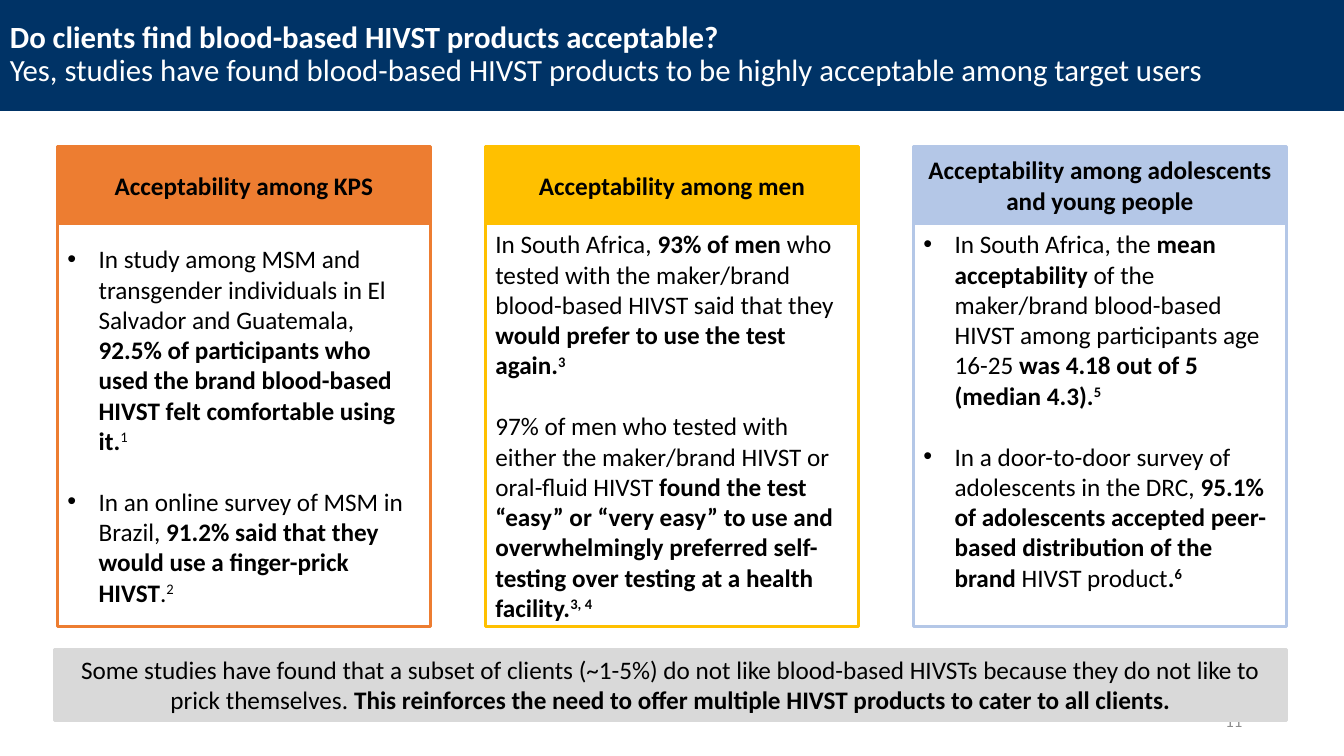
"""Build the slide on how acceptable blood-based HIVST products are to clients."""
from lxml import etree
from pptx import Presentation
from pptx.dml.color import RGBColor
from pptx.enum import shapes, text
from pptx.oxml import ns
from pptx.util import Inches, Pt

NAVY = RGBColor(0x00, 0x33, 0x66)
ORANGE = RGBColor(0xED, 0x7D, 0x31)
GOLD = RGBColor(0xFF, 0xC0, 0x00)
BLUE = RGBColor(0xB4, 0xC7, 0xE7)
PALE = RGBColor(0xD9, 0xD9, 0xD9)
GREY = RGBColor(0x8C, 0x8C, 0x8C)
WHITE = RGBColor(0xFF, 0xFF, 0xFF)
BLACK = RGBColor(0x00, 0x00, 0x00)
LEFT, CENTER, RIGHT = text.PP_ALIGN.LEFT, text.PP_ALIGN.CENTER, text.PP_ALIGN.RIGHT
TOP, MIDDLE = text.MSO_ANCHOR.TOP, text.MSO_ANCHOR.MIDDLE

deck = Presentation()
deck.slide_width, deck.slide_height = Inches(13.33), Inches(7.5)
slide = deck.slides.add_slide(deck.slide_layouts[6])


def add_box(x, y, w, h, fill, edge=None):
    """Add a plain rectangle, with a border if an edge colour is given."""
    box = slide.shapes.add_shape(
        shapes.MSO_SHAPE.RECTANGLE, Inches(x), Inches(y), Inches(w), Inches(h))
    box.shadow.inherit = False
    box.fill.solid()
    box.fill.fore_color.rgb = fill
    if edge is None:
        box.line.fill.background()
    else:
        box.line.color.rgb = edge
        box.line.width = Pt(2.25)
    return box


def write(box, paras, align=LEFT, anchor=MIDDLE, size=18, color=BLACK,
          gap=0, space=None, bullet=False):
    """Write paragraphs of (text, style) runs; style b is bold, s superscript."""
    frame = box.text_frame
    frame.word_wrap = True
    frame.vertical_anchor = anchor
    for i, runs in enumerate(paras):
        para = frame.add_paragraph() if i else frame.paragraphs[0]
        para.alignment = align
        para.line_spacing = space
        para.space_before = Pt(gap if i else 0)
        if bullet:
            props = para._p.get_or_add_pPr()
            props.set("marL", str(Inches(0.31)))
            props.set("indent", str(-Inches(0.31)))
            etree.SubElement(props, ns.qn("a:buFont")).set("typeface", "Arial")
            etree.SubElement(props, ns.qn("a:buChar")).set("char", "•")
        for words, style in runs:
            run = para.add_run()
            run.text = words
            run.font.name = "Calibri"
            run.font.size = Pt(size)
            run.font.color.rgb = color
            run.font.bold = "b" in style
            if "s" in style:
                run._r.get_or_add_rPr().set("baseline", "30000")


title = [
    [("Do clients find blood-based HIVST products acceptable?", "b")],
    [("Yes, studies have found blood-based HIVST products to be highly "
      "acceptable among target users", "")],
]
write(add_box(0, 0, 13.33, 1.1, NAVY), title, size=22, color=WHITE, space=0.9)

page = slide.shapes.add_textbox(Inches(9.42), Inches(6.95), Inches(3), Inches(0.4))
write(page, [[("11", "")]], align=RIGHT, size=12, color=GREY)

groups = [
    ("Acceptability among KPS", ORANGE, MIDDLE, True, [
        [("In study among MSM and transgender individuals in El Salvador and "
          "Guatemala, ", ""),
         ("92.5% of participants who used the brand blood-based HIVST felt "
          "comfortable using it.", "b"),
         ("1", "s")],
        [("In an online survey of MSM in Brazil, ", ""),
         ("91.2% said that they would use a finger-prick HIVST", "b"),
         (".", ""), ("2", "s")],
    ]),
    ("Acceptability among men", GOLD, TOP, False, [
        [("In South Africa, ", ""), ("93% of men ", "b"),
         ("who tested with the maker/brand blood-based HIVST said that they ", ""),
         ("would prefer to use the test again.", "b"), ("3", "bs")],
        [("97% of men who tested with either the maker/brand HIVST or "
          "oral-fluid HIVST ", ""),
         ("found the test “easy” or “very easy” to use and overwhelmingly "
          "preferred self-testing over testing at a health facility.", "b"),
         ("3, 4", "bs")],
    ]),
    ("Acceptability among adolescents and young people", BLUE, TOP, True, [
        [("In South Africa, the ", ""), ("mean acceptability", "b"),
         (" of the maker/brand blood-based HIVST among participants age 16-25 ", ""),
         ("was 4.18 out of 5 (median 4.3).", "b"), ("5", "bs")],
        [("In a door-to-door survey of adolescents in the DRC, ", ""),
         ("95.1% of adolescents accepted peer-based distribution of the "
          "brand ", "b"),
         ("HIVST product", ""), (".", "b"), ("6", "bs")],
    ]),
]
step = (9.06 - 0.57) / 2
for i, (head, hue, anchor, bullet, paras) in enumerate(groups):
    x = 0.57 + i * step
    write(add_box(x, 1.45, 3.7, 0.77, hue, hue), [[(head, "b")]], align=CENTER)
    write(add_box(x, 2.22, 3.7, 4, WHITE, hue), paras,
          anchor=anchor, gap=22, bullet=bullet)

note = [[
    ("Some studies have found that a subset of clients (~1-5%) do not like "
     "blood-based HIVSTs because they do not like to prick themselves. ", ""),
    ("This reinforces the need to offer multiple HIVST products to cater to "
     "all clients.", "b"),
]]
write(add_box(0.54, 6.44, 12.22, 0.71, PALE, PALE), note, align=CENTER, anchor=TOP)

deck.save("out.pptx")
